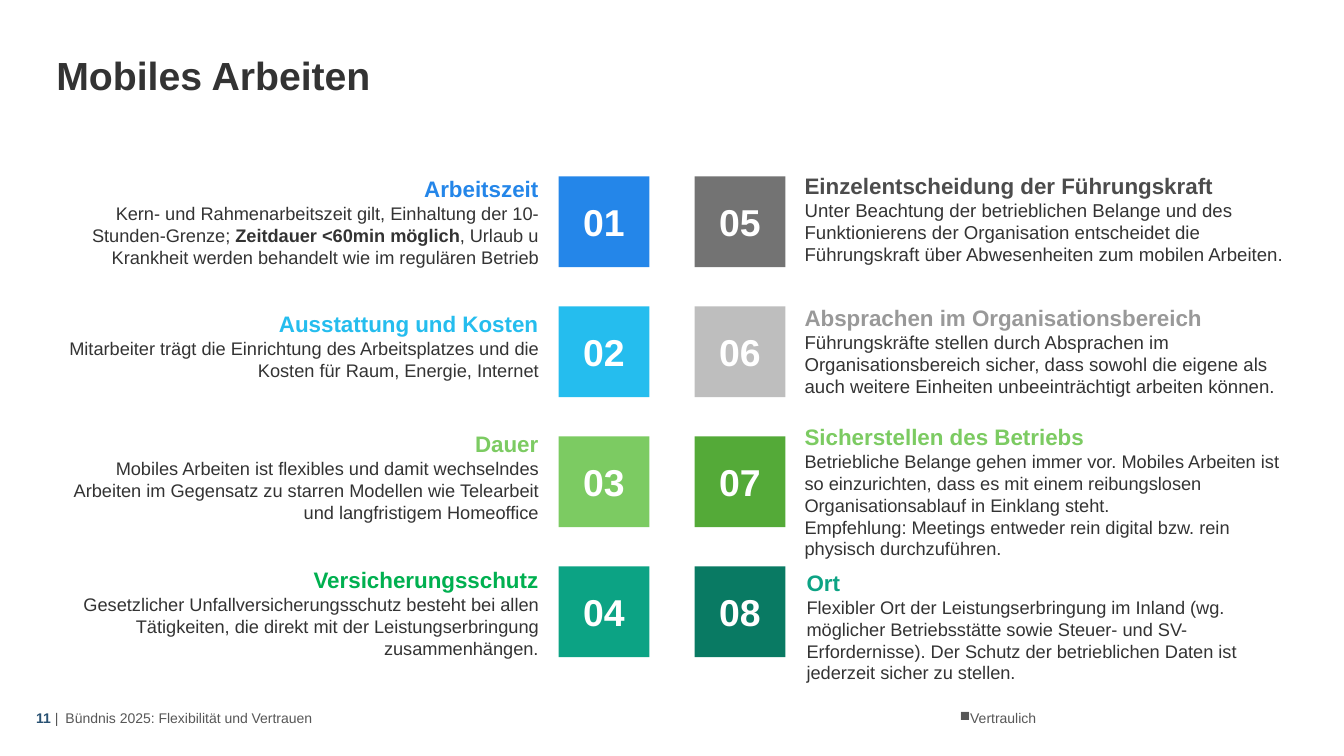
from collections import namedtuple
from lxml import etree
from pptx import Presentation
from pptx.dml.color import RGBColor
from pptx.enum.shapes import MSO_SHAPE as Shape
from pptx.enum.text import MSO_ANCHOR as Anchor, PP_ALIGN as Align
from pptx.oxml.ns import qn
from pptx.util import Inches, Pt

FONT = "Arial"
WHITE = RGBColor(0xFF, 0xFF, 0xFF)
DARK = RGBColor(0x33, 0x33, 0x33)
FOOTER_GREY = RGBColor(0x57, 0x57, 0x57)
NAVY = RGBColor(0x28, 0x51, 0x72)
BLUE = RGBColor(0x24, 0x86, 0xE9)
CYAN = RGBColor(0x25, 0xBD, 0xEE)
LIME = RGBColor(0x7C, 0xCB, 0x62)
EMERALD = RGBColor(0x00, 0xB0, 0x50)
TEAL = RGBColor(0x0C, 0xA3, 0x84)
CHARCOAL = RGBColor(0x4C, 0x4C, 0x4C)
GREY = RGBColor(0x73, 0x73, 0x73)
MID_GREY = RGBColor(0x99, 0x99, 0x99)
SILVER = RGBColor(0xBE, 0xBE, 0xBE)
GREEN = RGBColor(0x54, 0xAA, 0x38)
DEEP_TEAL = RGBColor(0x09, 0x7A, 0x63)

Box = namedtuple("Box", "left top width height")
Topic = namedtuple("Topic", "heading tile_color heading_color text_box size body")

FIRST_ROW, ROW_STEP, TILE = 1.75, 1.29, 0.9
LEFT_TILES, RIGHT_TILES = 5.54, 6.89

LEFT_TOPICS = [
    Topic("Arbeitszeit", BLUE, BLUE, Box(0.56, 1.73, 4.78, 0.94), 13, [[
        ("Kern- und Rahmenarbeitszeit gilt, Einhaltung der 10-Stunden-Grenze; ", False),
        ("Zeitdauer <60min möglich", True),
        (", Urlaub u Krankheit werden behandelt wie im regulären Betrieb", False)]]),
    Topic("Ausstattung und Kosten", CYAN, CYAN, Box(0.56, 3.07, 4.78, 0.72), 13, [[
        ("Mitarbeiter trägt die Einrichtung des Arbeitsplatzes und die Kosten "
         "für Raum, Energie, Internet", False)]]),
    Topic("Dauer", LIME, LIME, Box(0.56, 4.26, 4.78, 0.94), 13, [[
        ("Mobiles Arbeiten ist flexibles und damit wechselndes Arbeiten im Gegensatz "
         "zu starren Modellen wie Telearbeit und langfristigem Homeoffice", False)]]),
    Topic("Versicherungsschutz", TEAL, EMERALD, Box(0.56, 5.61, 4.78, 0.94), 13, [[
        ("Gesetzlicher Unfallversicherungsschutz besteht bei allen Tätigkeiten, die "
         "direkt mit der Leistungserbringung zusammenhängen.", False)]]),
]
RIGHT_TOPICS = [
    Topic("Einzelentscheidung der Führungskraft", GREY, CHARCOAL,
          Box(7.98, 1.7, 4.78, 0.94), 13.3, [[
              ("Unter Beachtung der betrieblichen Belange und des Funktionierens der "
               "Organisation entscheidet die Führungskraft über Abwesenheiten zum "
               "mobilen Arbeiten.", False)]]),
    Topic("Absprachen im Organisationsbereich", SILVER, MID_GREY,
          Box(7.98, 3.01, 4.78, 0.94), 13.3, [[
              ("Führungskräfte stellen durch Absprachen im Organisationsbereich sicher, "
               "dass sowohl die eigene als auch weitere Einheiten unbeeinträchtigt "
               "arbeiten können.", False)]]),
    Topic("Sicherstellen des Betriebs", GREEN, LIME, Box(7.98, 4.18, 4.78, 1.39), 13, [
        [("Betriebliche Belange gehen immer vor. Mobiles Arbeiten ist so einzurichten, "
          "dass es mit einem reibungslosen Organisationsablauf in Einklang steht.", False)],
        [("Empfehlung: Meetings entweder rein digital bzw. rein physisch "
          "durchzuführen.", False)]]),
    Topic("Ort", DEEP_TEAL, TEAL, Box(8, 5.63, 4.78, 1.17), 13, [[
        ("Flexibler Ort der Leistungserbringung im Inland (wg. möglicher "
         "Betriebsstätte sowie Steuer- und SV-Erfordernisse). Der Schutz der "
         "betrieblichen Daten ist jederzeit sicher zu stellen.", False)]]),
]


def prepare_frame(frame, anchor=Anchor.MIDDLE, wrap=True):
    frame.margin_left = frame.margin_right = 0
    frame.margin_top = frame.margin_bottom = 0
    frame.vertical_anchor = anchor
    frame.word_wrap = wrap
    return frame


def add_text_frame(page, box, anchor=Anchor.MIDDLE, wrap=True):
    shape = page.shapes.add_textbox(*[Inches(length) for length in box])
    return prepare_frame(shape.text_frame, anchor, wrap)


def add_span(para, text, size, color, bold=False):
    span = para.add_run()
    span.text = text
    span.font.name = FONT
    span.font.size = Pt(size)
    span.font.bold = bold
    span.font.color.rgb = color


def add_title(page, box):
    para = add_text_frame(page, box, Anchor.TOP).paragraphs[0]
    para.line_spacing = 0.9
    add_span(para, "Mobiles Arbeiten", 28, DARK, True)


def add_tile(page, box, number, color):
    tile = page.shapes.add_shape(Shape.RECTANGLE, *[Inches(length) for length in box])
    tile.shadow.inherit = False
    tile.fill.solid()
    tile.fill.fore_color.rgb = color
    tile.line.fill.background()
    para = prepare_frame(tile.text_frame).paragraphs[0]
    para.alignment = Align.CENTER
    add_span(para, f"{number:02d}", 26.7, WHITE, True)


def add_topic_text(page, topic, align):
    frame = add_text_frame(page, topic.text_box)
    heading = frame.paragraphs[0]
    heading.alignment = align
    add_span(heading, topic.heading, 16, topic.heading_color, True)
    for spans in topic.body:
        para = frame.add_paragraph()
        para.alignment = align
        for text, bold in spans:
            add_span(para, text, topic.size, DARK, bold)


def add_column(page, topics, tile_left, first_number, align):
    for row, topic in enumerate(topics):
        tile_box = Box(tile_left, FIRST_ROW + row * ROW_STEP, TILE, TILE)
        add_tile(page, tile_box, first_number + row, topic.tile_color)
        add_topic_text(page, topic, align)


def add_footer(page, box):
    number = add_text_frame(page, Box(box.left, box.top, 0.47, box.height)).paragraphs[0]
    number.alignment = Align.RIGHT
    add_span(number, "11 ", 10, NAVY, True)
    add_span(number, "|", 10, FOOTER_GREY)

    label_box = Box(box.left + 0.54, box.top, 3, box.height)
    label = add_text_frame(page, label_box, wrap=False).paragraphs[0]
    add_span(label, "Bündnis 2025: Flexibilität und Vertrauen", 10, FOOTER_GREY)

    mark_box = Box(box.left + 9.41, box.top + 0.09, 1.56, 0.17)
    mark = add_text_frame(page, mark_box).paragraphs[0]
    properties = mark._p.get_or_add_pPr()
    properties.set("marL", "0")
    properties.set("indent", "0")
    etree.SubElement(properties, qn("a:buChar")).set("char", "■")
    add_span(mark, "Vertraulich", 10, FOOTER_GREY)


def main():
    deck = Presentation()
    deck.slide_width, deck.slide_height = Inches(13.33), Inches(7.5)
    page = deck.slides.add_slide(deck.slide_layouts[6])
    add_title(page, Box(0.56, 0.56, 12.2, 0.43))
    add_column(page, LEFT_TOPICS, LEFT_TILES, 1, Align.RIGHT)
    add_column(page, RIGHT_TOPICS, RIGHT_TILES, 5, Align.LEFT)
    add_footer(page, Box(0.11, 6.95, 12.65, 0.34))
    deck.save("out.pptx")


if __name__ == "__main__":
    main()
